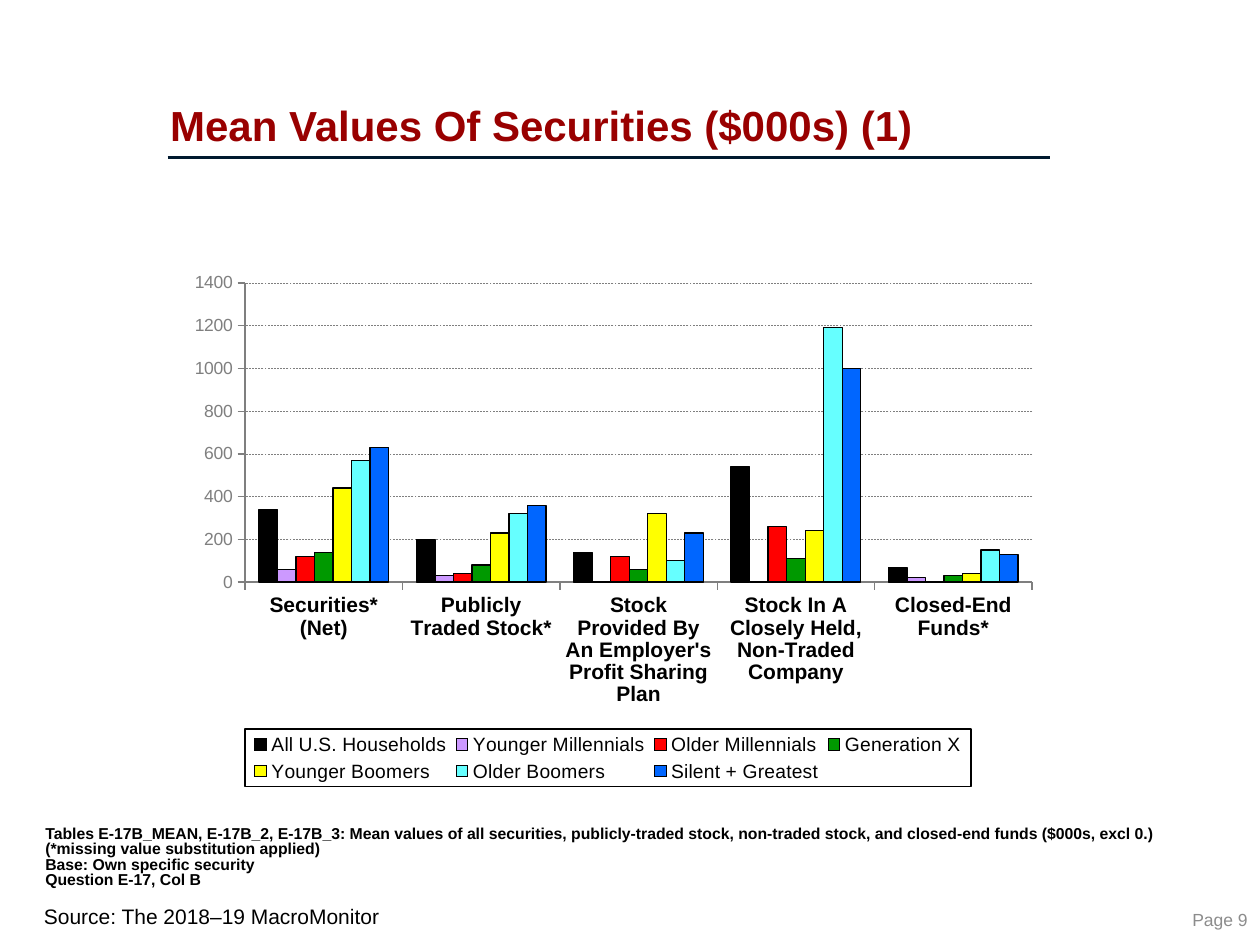
from lxml.etree import SubElement
from pptx import Presentation
from pptx.chart.data import CategoryChartData
from pptx.dml.color import RGBColor
from pptx.enum.chart import XL_CHART_TYPE as ChartType, XL_LEGEND_POSITION as LegendPosition, XL_TICK_MARK as Tick
from pptx.enum.dml import MSO_LINE as Dash
from pptx.enum.shapes import MSO_CONNECTOR as Connector
from pptx.enum.text import MSO_ANCHOR as Anchor, MSO_AUTO_SIZE as AutoSize, PP_ALIGN as Align
from pptx.oxml import parse_xml
from pptx.oxml.ns import nsdecls, qn
from pptx.util import Pt

PX = 9144
FONT = "Arial"
BLACK, GRAY = "000000", "7F7F7F"

CATEGORIES = [
    "Securities* (Net)",
    "Publicly Traded Stock*",
    "Stock Provided By An Employer's Profit Sharing Plan",
    "Stock In A Closely Held, Non-Traded Company",
    "Closed-End Funds*",
]
GENERATIONS = [
    ("All U.S. Households", BLACK, (340, 200, 140, 540, 70)),
    ("Younger Millennials", "CC99FF", (60, 30, 0, 0, 20)),
    ("Older Millennials", "FF0000", (120, 40, 120, 260, 0)),
    ("Generation X", "009900", (140, 80, 60, 110, 30)),
    ("Younger Boomers", "FFFF00", (440, 230, 320, 240, 40)),
    ("Older Boomers", "66FFFF", (570, 320, 100, 1190, 150)),
    ("Silent + Greatest", "0066FF", (630, 360, 230, 1000, 130)),
]
NOTES = [
    "Tables E-17B_MEAN, E-17B_2, E-17B_3: Mean values of all securities, publicly-traded stock, "
    "non-traded stock, and closed-end funds ($000s, excl 0.)",
    "(*missing value substitution applied)",
    "Base: Own specific security",
    "Question E-17, Col B",
]


def px(*lengths):
    return [length * PX for length in lengths]


def rgb(color):
    return RGBColor.from_string(color)


def style_font(font, size, color=BLACK, bold=False):
    font.name, font.size, font.bold = FONT, Pt(size), bold
    font.color.rgb = rgb(color)


def style_line(line, color, width):
    line.color.rgb = rgb(color)
    line.width = Pt(width)


def write(shape, *lines, size, color=BLACK, bold=False, align=Align.LEFT, anchor=Anchor.TOP,
          insets=(10, 5, 10, 5), spacing=None, wrap=True):
    frame = shape.text_frame
    frame.text = "\n".join(lines)
    frame.auto_size = AutoSize.NONE
    frame.word_wrap = wrap
    frame.vertical_anchor = anchor
    frame.margin_left, frame.margin_top, frame.margin_right, frame.margin_bottom = px(*insets)
    for paragraph in frame.paragraphs:
        paragraph.alignment = align
        paragraph.line_spacing = spacing
        style_font(paragraph.font, size, color, bold)


def set_layout(layout, x, y, w, h, inner=False):
    manual = SubElement(layout, qn("c:manualLayout"))
    settings = [("layoutTarget", "inner")] if inner else []
    settings += [("xMode", "edge"), ("yMode", "edge"), ("x", x), ("y", y), ("w", w), ("h", h)]
    for tag, value in settings:
        SubElement(manual, qn(f"c:{tag}")).set("val", str(value))


def add_heading(slide, x, y, w, h):
    title = slide.shapes.title
    title.left, title.top, title.width, title.height = px(x + 2, y, w, h)
    write(title, "Mean Values Of Securities ($000s) (1)", size=24, color="990000", bold=True,
          anchor=Anchor.BOTTOM, insets=(0, 0, 0, 5), spacing=0.8)
    rule = slide.shapes.add_connector(Connector.STRAIGHT, *px(x, y + h + 1, x + w, y + h + 1))
    style_line(rule.line, "00192F", 2)
    SubElement(rule.element.spPr, qn("a:effectLst"))


def add_legend(chart):
    chart.has_legend = True
    legend = chart.legend
    legend.position = LegendPosition.BOTTOM
    legend.include_in_layout = False
    style_font(legend.font, 11)
    layout = legend._element.get_or_add_layout() if hasattr(legend._element, "get_or_add_layout") \
        else legend._element.find(qn("c:layout"))
    if layout is None:
        layout = parse_xml(f"<c:layout {nsdecls('c')}/>")
        legend._element.find(qn("c:legendPos")).addnext(layout)
    set_layout(layout, 0.08, 0.89, 0.83, 0.11)
    border = parse_xml(
        f'<c:spPr {nsdecls("c", "a")}><a:noFill/><a:ln w="9525"><a:solidFill>'
        f'<a:srgbClr val="{BLACK}"/></a:solidFill></a:ln></c:spPr>')
    legend._element.find(qn("c:txPr")).addprevious(border)


def add_securities_chart(slide, x, y, w, h):
    data = CategoryChartData(number_format="0")
    data.categories = CATEGORIES
    for name, _, values in GENERATIONS:
        data.add_series(name, values)
    chart = slide.shapes.add_chart(ChartType.COLUMN_CLUSTERED, *px(x, y, w, h), data).chart
    chart.has_title = False
    style_font(chart.font, 10)

    plot = chart.plots[0]
    plot.gap_width, plot.overlap = 150, 0
    plot.vary_by_categories = False
    for series, (_, color, _) in zip(plot.series, GENERATIONS):
        series.invert_if_negative = False
        series.format.fill.solid()
        series.format.fill.fore_color.rgb = rgb(color)
        style_line(series.format.line, BLACK, 0.75)

    values_axis, category_axis = chart.value_axis, chart.category_axis
    for axis in (values_axis, category_axis):
        axis.major_tick_mark, axis.minor_tick_mark = Tick.OUTSIDE, Tick.NONE
        style_line(axis.format.line, GRAY, 0.75)
    style_font(category_axis.tick_labels.font, 12, bold=True)
    style_font(values_axis.tick_labels.font, 10, GRAY)
    values_axis.minimum_scale, values_axis.maximum_scale, values_axis.major_unit = 0, 1400, 200
    gridlines = values_axis.major_gridlines.format.line
    style_line(gridlines, GRAY, 0.25)
    gridlines.dash_style = Dash.DASH

    plot_area = chart._chartSpace.chart.plotArea
    layout = plot_area.find(qn("c:layout"))
    if layout is None:
        layout = parse_xml(f"<c:layout {nsdecls('c')}/>")
        plot_area.insert(0, layout)
    set_layout(layout, 0.08, 0.04, 0.9, 0.57, inner=True)
    add_legend(chart)


def add_footer(slide, x, y, w, h):
    notes = slide.shapes.add_textbox(*px(x + 7, y, 870, 60))
    write(notes, *NOTES, size=9, bold=True, anchor=Anchor.MIDDLE, insets=(4, 13, 0, 13),
          spacing=0.8, wrap=False)
    source = slide.shapes.add_textbox(*px(x, y + h - 30, 892, 30))
    write(source, "Source: The 2018–19 MacroMonitor", size=12)
    page = slide.shapes.add_textbox(*px(x + w - 74, y + h - 26, 74, 27))
    write(page, "Page 9", size=10, color="8C8C8C", align=Align.RIGHT, anchor=Anchor.MIDDLE, wrap=False)


def main():
    deck = Presentation()
    deck.slide_width, deck.slide_height = px(1000, 750)
    slide = deck.slides.add_slide(deck.slide_layouts[5])
    add_heading(slide, 133, 53, 700, 71)
    add_securities_chart(slide, 139, 208, 694, 417)
    add_footer(slide, 25, 651, 975, 91)
    deck.save("out.pptx")


if __name__ == "__main__":
    main()
